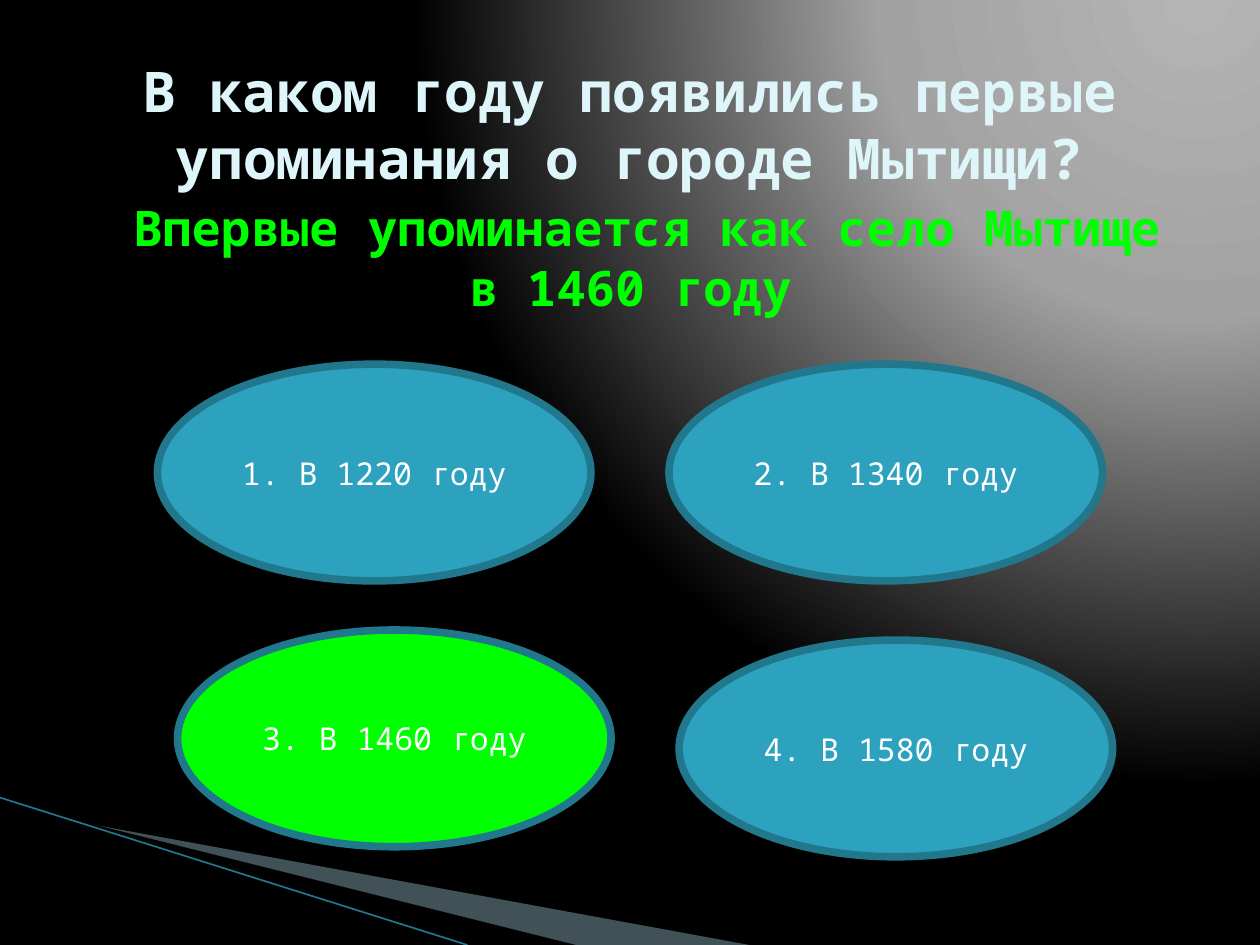
import lxml.etree
import pptx
import pptx.dml.color
import pptx.enum.shapes
import pptx.enum.text
import pptx.oxml.ns
import pptx.util

Inches = pptx.util.Inches
FONT = "Noto Sans Mono"
BLUE, GREEN, TEAL = "2DA2BF", "00FF00", "21788D"
QUESTION = "В каком году появились первые упоминания о городе Мытищи?"
REPLY = "Впервые упоминается как село Мытище в 1460 году"
ANSWERS = [
    ("1. В 1220 году", 1.25, 2.89, BLUE),
    ("2. В 1340 году", 5.31, 2.89, BLUE),
    ("3. В 1460 году", 1.41, 5, GREEN),
    ("4. В 1580 году", 5.39, 5.08, BLUE),
]


def color(value):
    """Turn a hex string into a colour."""
    return pptx.dml.color.RGBColor.from_string(value)


def add_element(parent, tag, **attributes):
    """Append a drawing element to a parent element."""
    child = lxml.etree.SubElement(parent, pptx.oxml.ns.qn(tag))
    for name, value in attributes.items():
        child.set(name, str(value))
    return child


def apply_format(target, values):
    """Set every attribute named in a dict."""
    for name, value in values.items():
        setattr(target, name, value)


def add_span(para, text, size, tint, bold=False):
    """Add a formatted run to a paragraph."""
    span = para.add_run()
    span.text = text
    apply_format(span.font, {"name": FONT, "size": pptx.util.Pt(size), "bold": bold})
    span.font.color.rgb = color(tint)


def paint_background(page):
    """Fill the page with a radial gradient."""
    fill = page.background.fill
    fill.gradient()
    gradient = page.background._cSld.find(".//" + pptx.oxml.ns.qn("a:gradFill"))
    for child in list(gradient):
        gradient.remove(child)
    stops = add_element(gradient, "a:gsLst")
    for position, tint in [(0, "B4B4B4"), (40, "A2A2A2"), (100, "000000")]:
        stop = add_element(stops, "a:gs", pos=position * 1000)
        add_element(stop, "a:srgbClr", val=tint)
    circle = add_element(gradient, "a:path", path="circle")
    add_element(circle, "a:fillToRect", l=95000, t=-106000, r=5000, b=206000)


def add_wedge(page, points, tint, opacity=100):
    """Draw a filled polygon without an outline."""
    corners = [(Inches(x), Inches(y)) for x, y in points]
    builder = page.shapes.build_freeform(*corners[0])
    builder.add_line_segments(corners[1:], close=True)
    wedge = builder.convert_to_shape()
    wedge.shadow.inherit = False
    wedge.fill.solid()
    wedge.fill.fore_color.rgb = color(tint)
    wedge.line.fill.background()
    if opacity < 100:
        fill = wedge.element.spPr.find(".//" + pptx.oxml.ns.qn("a:srgbClr"))
        add_element(fill, "a:alpha", val=opacity * 1000)


def add_stripe(page, start, end):
    """Draw the thin slanted line."""
    ends = [Inches(value) for value in start + end]
    stripe = page.shapes.add_connector(pptx.enum.shapes.MSO_CONNECTOR.STRAIGHT, *ends)
    stripe.line.width = pptx.util.Pt(0.95)
    stripe.line.color.rgb = color(TEAL)
    add_element(stripe.element.spPr, "a:effectLst")


def write_title(page):
    """Place the question and its reply in the title."""
    title = page.shapes.title
    apply_format(title, {"left": Inches(0.5), "top": Inches(0.3),
                         "width": Inches(9), "height": Inches(2.36)})
    apply_format(title.text_frame, {
        "word_wrap": True,
        "auto_size": pptx.enum.text.MSO_AUTO_SIZE.NONE,
        "vertical_anchor": pptx.enum.text.MSO_ANCHOR.MIDDLE,
    })
    para = title.text_frame.paragraphs[0]
    apply_format(para, {"alignment": pptx.enum.text.PP_ALIGN.CENTER, "line_spacing": 1.0})
    add_span(para, QUESTION, 32, "DEF5FA", True)
    para.add_line_break()
    add_span(para, " ", 32, "DEF5FA", True)
    add_span(para, REPLY, 28, GREEN, True)


def add_answer(page, text, left, top, tint):
    """Draw one answer oval."""
    oval = page.shapes.add_shape(pptx.enum.shapes.MSO_SHAPE.OVAL, Inches(left),
                                 Inches(top), Inches(3.44), Inches(1.72))
    oval.shadow.inherit = False
    oval.fill.solid()
    oval.fill.fore_color.rgb = color(tint)
    oval.line.color.rgb = color(TEAL)
    oval.line.width = pptx.util.Pt(4.33)
    apply_format(oval.text_frame, {
        "word_wrap": True, "vertical_anchor": pptx.enum.text.MSO_ANCHOR.MIDDLE})
    para = oval.text_frame.paragraphs[0]
    para.alignment = pptx.enum.text.PP_ALIGN.CENTER
    add_span(para, text, 18, "FFFFFF")


def main():
    """Build the quiz slide."""
    deck = pptx.Presentation()
    apply_format(deck, {"slide_width": Inches(10), "slide_height": Inches(7.5)})
    page = deck.slides.add_slide(deck.slide_layouts[5])
    paint_background(page)
    add_wedge(page, [(0.55, 6.51), (5.95, 7.5), (4.56, 7.5)], "A0CBDC", 40)
    add_wedge(page, [(0.53, 6.49), (4.57, 7.5), (3.72, 7.5)], "000000")
    add_stripe(page, (0, 6.33), (3.71, 7.5))
    write_title(page)
    for answer in ANSWERS:
        add_answer(page, *answer)
    deck.save("out.pptx")


if __name__ == "__main__":
    main()
